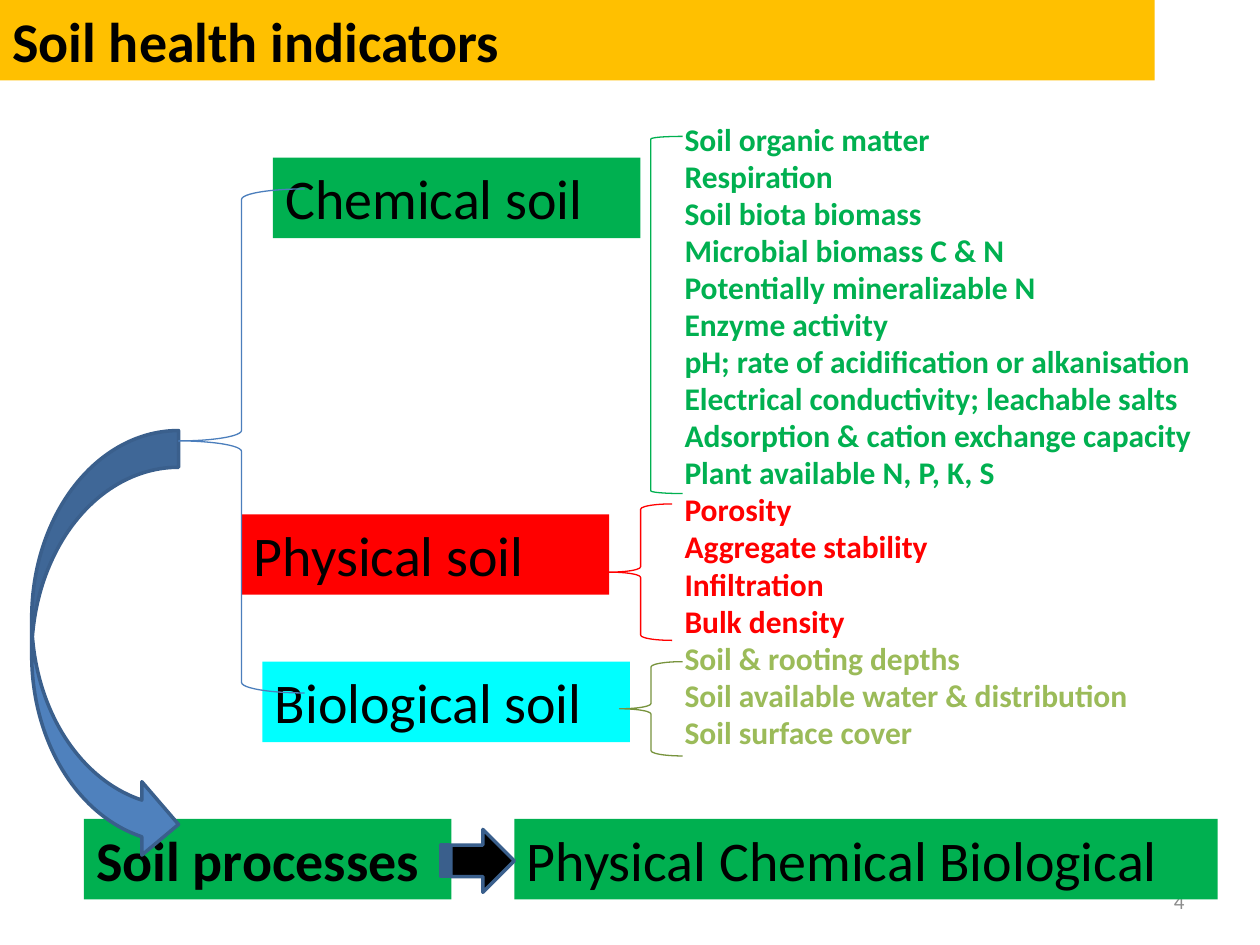
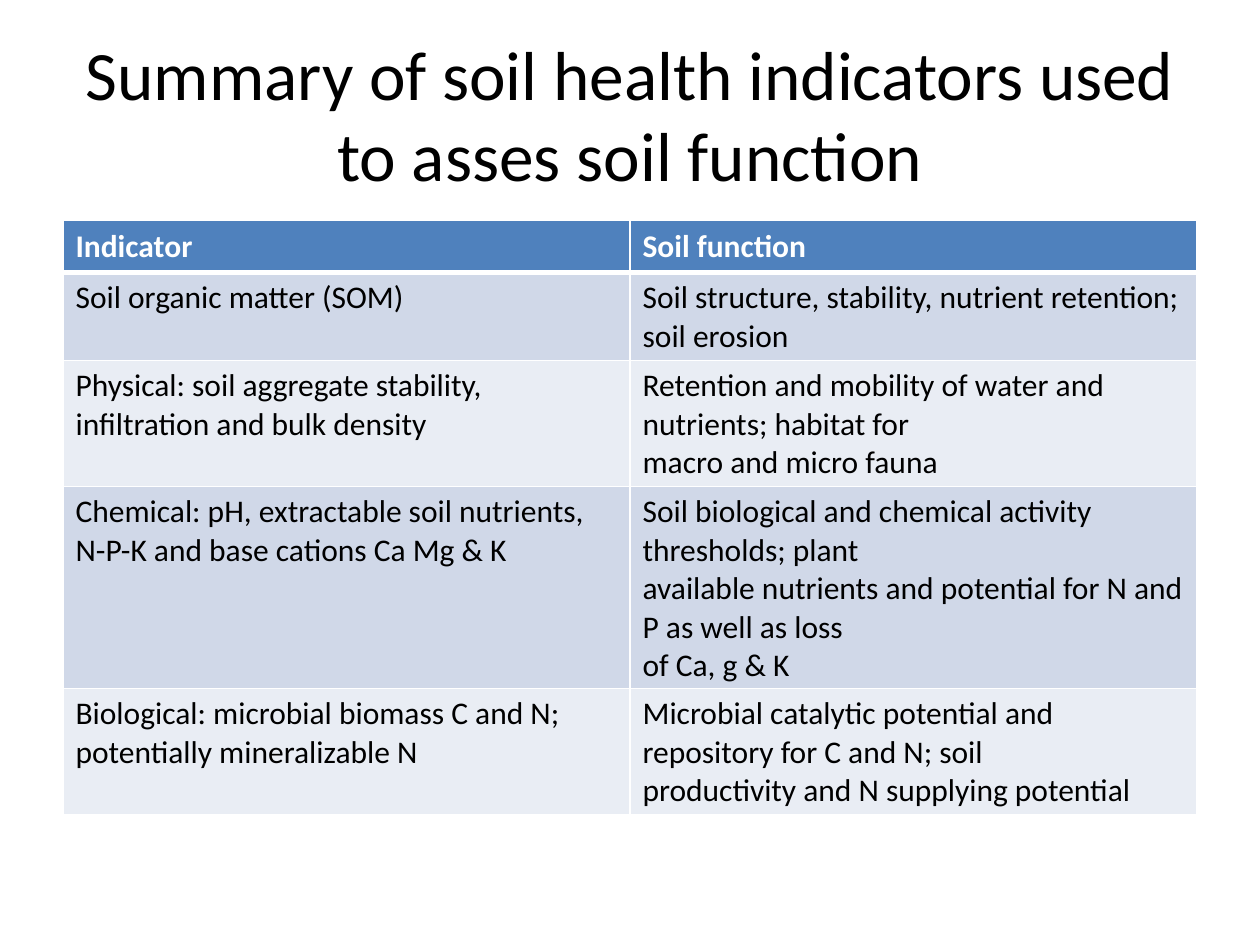
from lxml import etree
from pptx import Presentation
from pptx.dml.color import RGBColor
from pptx.enum.shapes import MSO_SHAPE
from pptx.enum.text import MSO_ANCHOR, PP_ALIGN
from pptx.oxml.ns import qn
from pptx.util import Cm, Pt

RECTANGLE = MSO_SHAPE.RECTANGLE
LEFT_BRACE = MSO_SHAPE.LEFT_BRACE
LEFT_BRACKET = MSO_SHAPE.LEFT_BRACKET
CURVED_ARROW = MSO_SHAPE.CURVED_RIGHT_ARROW
STRIPED_ARROW = MSO_SHAPE.STRIPED_RIGHT_ARROW
TOP, MIDDLE = MSO_ANCHOR.TOP, MSO_ANCHOR.MIDDLE
LEFT, CENTER, RIGHT = PP_ALIGN.LEFT, PP_ALIGN.CENTER, PP_ALIGN.RIGHT

BLACK = RGBColor(0x00, 0x00, 0x00)
WHITE = RGBColor(0xFF, 0xFF, 0xFF)
GREY = RGBColor(0x8C, 0x8C, 0x8C)
GREEN = RGBColor(0x00, 0xB0, 0x50)
RED = RGBColor(0xFF, 0x00, 0x00)
CYAN = RGBColor(0x00, 0xFF, 0xFF)
AMBER = RGBColor(0xFF, 0xC0, 0x00)
OLIVE = RGBColor(0x9B, 0xBB, 0x59)
DARK_OLIVE = RGBColor(0x77, 0x93, 0x3C)
BLUE = RGBColor(0x4F, 0x81, 0xBD)
BRACE_BLUE = RGBColor(0x4B, 0x7E, 0xBC)
DARK_BLUE = RGBColor(0x3A, 0x5F, 0x8C)
BAND_DARK = RGBColor(0xD0, 0xD8, 0xE8)
BAND_LIGHT = RGBColor(0xE9, 0xED, 0xF4)

BODY = {"name": "Calibri", "size": Pt(18), "bold": False}
LABEL = {**BODY, "size": Pt(32)}
TITLE = {**BODY, "size": Pt(39.6)}
NUMBER = {**BODY, "size": Pt(12)}


def write(frame, lines, font, align=LEFT, anchor=TOP, spacing=1.0):
    """Fill a text frame with (text, colour) lines, one paragraph each."""
    frame.word_wrap = True
    frame.vertical_anchor = anchor
    for index, (text, colour) in enumerate(lines):
        para = frame.paragraphs[0] if index == 0 else frame.add_paragraph()
        para.alignment = align
        para.line_spacing = spacing
        span = para.add_run()
        span.text = text
        for key, value in font.items():
            setattr(span.font, key, value)
        span.font.color.rgb = colour


def add_preset(page, kind, place, fill=None, line=None, weight=0.75):
    """Add a shadowless preset shape; no colour means no fill or no line."""
    shape = page.shapes.add_shape(kind, *map(Cm, place))
    shape.shadow.inherit = False
    if fill is None:
        shape.fill.background()
    else:
        shape.fill.solid()
        shape.fill.fore_color.rgb = fill
    if line is None:
        shape.line.fill.background()
    else:
        shape.line.color.rgb = line
        shape.line.width = Pt(weight)
    return shape


deck = Presentation()
deck.slide_width, deck.slide_height = Cm(25.4), Cm(19.05)
blank = deck.slide_layouts[6]

# Slide 1: indicators
page = deck.slides.add_slide(blank)
number = page.shapes.add_textbox(Cm(18.2), Cm(17.66), Cm(5.93), Cm(1.01))
write(number.text_frame, [("4", GREY)], NUMBER, RIGHT, MIDDLE)

indicators = [
    (GREEN, [
        "Soil organic matter",
        "Respiration",
        "Soil biota biomass",
        "Microbial biomass C & N",
        "Potentially mineralizable N",
        "Enzyme activity",
        "pH; rate of acidification or alkanisation",
        "Electrical conductivity; leachable salts",
        "Adsorption & cation exchange capacity",
        "Plant available N, P, K, S",
    ]),
    (RED, ["Porosity", "Aggregate stability", "Infiltration", "Bulk density"]),
    (OLIVE, [
        "Soil & rooting depths",
        "Soil available water & distribution",
        "Soil surface cover",
    ]),
]
indicator_list = page.shapes.add_textbox(Cm(13.55), Cm(2.33), Cm(11.43), Cm(13.34))
write(indicator_list.text_frame,
      [(name, colour) for colour, names in indicators for name in names],
      {**BODY, "bold": True}, spacing=0.98)

LABEL_WIDTH, LABEL_HEIGHT = 7.41, 1.62
labels = [
    ("Chemical soil", 5.5, 3.18, LABEL_WIDTH, GREEN, False),
    ("Biological soil", 5.29, 13.34, LABEL_WIDTH, CYAN, False),
    ("Physical soil", 4.87, 10.37, LABEL_WIDTH, RED, False),
    ("Physical Chemical Biological", 10.37, 16.51, 14.18, GREEN, False),
    ("Soil processes", 1.69, 16.51, LABEL_WIDTH, GREEN, True),
    ("Soil health indicators", 0, 0, 23.28, AMBER, True),
]
for text, left, top, width, fill, bold in labels:
    label = add_preset(page, RECTANGLE, (left, top, width, LABEL_HEIGHT), fill)
    write(label.text_frame, [(text, BLACK)], {**LABEL, "bold": bold})

add_preset(page, CURVED_ARROW, (0.64, 8.68, 2.96, 8.68), BLUE, DARK_BLUE, 2)
add_preset(page, STRIPED_ARROW, (8.89, 16.72, 1.48, 1.27), BLACK, DARK_BLUE, 2)

groupings = [
    (LEFT_BRACE, (3.6, 3.81, 2.54, 10.16), BRACE_BLUE),
    (LEFT_BRACE, (12.28, 10.16, 1.27, 2.75), RED),
    (LEFT_BRACE, (12.49, 13.34, 1.27, 1.9), DARK_OLIVE),
    (LEFT_BRACKET, (13.12, 2.75, 0.64, 7.2), GREEN),
]
for kind, place, colour in groupings:
    add_preset(page, kind, place, line=colour)

# Slide 2: summary table
page = deck.slides.add_slide(blank)
title = page.shapes.add_textbox(Cm(1.27), Cm(0.76), Cm(22.86), Cm(3.18))
write(title.text_frame,
      [("Summary of soil health indicators used to asses soil function", BLACK)],
      TITLE, CENTER, MIDDLE, 0.98)

rows = [
    (["Indicator"], ["Soil function"]),
    (["Soil organic matter (SOM)"],
     ["Soil structure, stability, nutrient retention; soil erosion"]),
    (["Physical: soil aggregate stability,", "infiltration and bulk density"],
     ["Retention and mobility of water and nutrients; habitat for",
      "macro and micro fauna"]),
    (["Chemical: pH, extractable soil nutrients,",
      "N-P-K and base cations Ca Mg & K"],
     ["Soil biological and chemical activity thresholds; plant",
      "available nutrients and potential for N and P as well as loss",
      "of Ca, g & K"]),
    (["Biological: microbial biomass C and N;", "potentially mineralizable N"],
     ["Microbial catalytic potential and repository for C and N; soil",
      "productivity and N supplying potential"]),
]
ROW_HEIGHT = 1.04
table = page.shapes.add_table(len(rows), 2, Cm(1.27), Cm(4.45), Cm(22.86),
                              Cm(ROW_HEIGHT * len(rows))).table
table.horz_banding = False
table.first_row = False
for row_index, row in enumerate(rows):
    header = row_index == 0
    band = BLUE if header else (BAND_LIGHT, BAND_DARK)[row_index % 2]
    text_colour = WHITE if header else BLACK
    for column_index, lines in enumerate(row):
        cell = table.cell(row_index, column_index)
        write(cell.text_frame, [(line, text_colour) for line in lines],
              {**BODY, "bold": header})
        properties = cell._tc.get_or_add_tcPr()
        for side in ("lnL", "lnR", "lnT", "lnB"):
            thick = (header and side == "lnB") or (row_index == 1 and side == "lnT")
            border = etree.SubElement(properties, qn(f"a:{side}"),
                                      w=str(Pt(3 if thick else 1)))
            paint = etree.SubElement(border, qn("a:solidFill"))
            etree.SubElement(paint, qn("a:srgbClr"), val=str(WHITE))
        cell.fill.solid()
        cell.fill.fore_color.rgb = band

deck.save("out.pptx")
